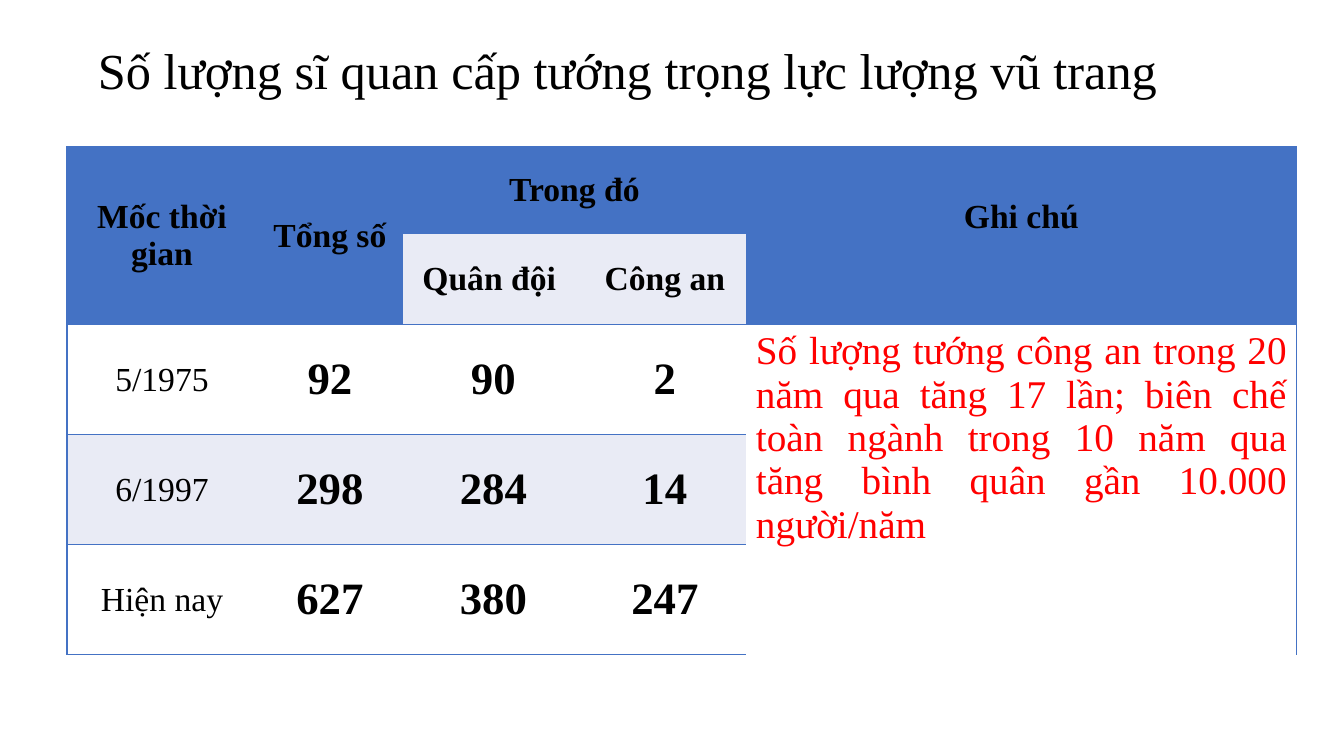
"""Build a slide with a table of general-rank officer counts."""
from dataclasses import dataclass

from lxml import etree
from pptx import Presentation
from pptx import util as u
from pptx.dml.color import RGBColor
from pptx.enum import text
from pptx.oxml.ns import qn

CENTER, JUSTIFY = text.PP_ALIGN.CENTER, text.PP_ALIGN.JUSTIFY
TOP, MIDDLE = text.MSO_ANCHOR.TOP, text.MSO_ANCHOR.MIDDLE


@dataclass(frozen=True)
class Theme:
    """Colours, font and type sizes of the slide."""
    font: str = "Times New Roman"
    ink: str = "000000"
    alert: str = "FF0000"
    blue: str = "4472C4"
    band: str = "E9EBF5"
    white: str = "FFFFFF"
    title: int = 36
    figure: int = 32
    note: int = 28
    label: int = 24


class Deck:
    """Hold the theme and the current slide and draw elements on it."""
    PX = 914400 / 100.8

    def __init__(self, theme, width, height):
        """Open a presentation with one blank slide."""
        self.theme = theme
        self.prs = Presentation()
        self.prs.slide_width, self.prs.slide_height = self.px(width), self.px(height)
        self.s = self.prs.slides.add_slide(self.prs.slide_layouts[6])

    def px(self, n):
        """Turn whole pixels into EMU."""
        return u.Emu(round(n * self.PX))

    def paragraph(self, tf, words, size, color, bold=False, **layout):
        """Set one formatted paragraph."""
        p = tf.paragraphs[0]
        for name, value in layout.items():
            setattr(p, name, value)
        r = p.add_run()
        r.text = words
        font = {"name": self.theme.font, "size": u.Pt(size), "bold": bold}
        for name, value in font.items():
            setattr(r.font, name, value)
        r.font.color.rgb = RGBColor.from_string(color)

    def title(self, words, *box):
        """Add the slide title."""
        tf = self.s.shapes.add_textbox(*map(self.px, box)).text_frame
        for name, value in {"word_wrap": True, "vertical_anchor": MIDDLE}.items():
            setattr(tf, name, value)
        self.paragraph(tf, words, self.theme.title, self.theme.ink, line_spacing=0.9)

    def table(self, left, top, widths, heights):
        """Add an empty table with the given column widths and row heights."""
        box = (left, top, sum(widths), sum(heights))
        table = self.s.shapes.add_table(
            len(heights), len(widths), *map(self.px, box)).table
        for column, width in zip(table.columns, widths):
            column.width = self.px(width)
        for row, height in zip(table.rows, heights):
            row.height = self.px(height)
        return table

    def cell(self, cell, fill, sides):
        """Fill a cell and rule only the named sides."""
        tcPr = cell._tc.get_or_add_tcPr()
        for side in "LRTB":
            ln = etree.SubElement(tcPr, qn(f"a:ln{side}"), w=str(u.Pt(1)))
            if side in sides:
                solid = etree.SubElement(ln, qn("a:solidFill"))
                etree.SubElement(solid, qn("a:srgbClr"), val=self.theme.blue)
            else:
                etree.SubElement(ln, qn("a:noFill"))
        cell.fill.solid()
        cell.fill.fore_color.rgb = RGBColor.from_string(fill)

    def cell_text(self, cell, words, size, color, bold, align=CENTER, anchor=MIDDLE):
        """Set the text of a cell."""
        cell.vertical_anchor = anchor
        self.paragraph(cell.text_frame, words, size, color, bold, alignment=align)


def main():
    """Draw the slide and save it."""
    t = Theme()
    d = Deck(t, 1344, 756)
    d.title("Số lượng sĩ quan cấp tướng trọng lực lượng vũ trang", 88, 0, 1159, 146)

    table = d.table(67, 147, (190, 146, 181, 162, 551), (87, 87, 110, 110, 110))
    merges = [(0, 0, 1, 0), (0, 1, 1, 1), (0, 2, 0, 3), (0, 4, 1, 4), (2, 4, 4, 4)]
    for r1, c1, r2, c2 in merges:
        table.cell(r1, c1).merge(table.cell(r2, c2))

    last = 4
    for r in range(5):
        for c in range(5):
            sides = "L" if c == 0 else "R" if c == last else ""
            if r in (0, 2) or (r > 2 and c < last):
                sides += "T"
            if r in (1, 4) or (r > 1 and c < last):
                sides += "B"
            header = r == 0 or (r == 1 and c in (0, 1, last))
            banded = r % 2 == 1 and c < last
            fill = t.blue if header else t.band if banded else t.white
            d.cell(table.cell(r, c), fill, sides)

    headings = {(0, 0): "Mốc thời gian", (0, 1): "Tổng số", (0, 2): "Trong đó",
                (0, 4): "Ghi chú", (1, 2): "Quân đội ", (1, 3): "Công an"}
    for place, words in headings.items():
        d.cell_text(table.cell(*place), words, t.label, t.ink, True)
    table.cell(0, 4).margin_bottom = d.px(42)

    counts = [("5/1975", 92, 90, 2), ("6/1997", 298, 284, 14),
              ("Hiện nay", 627, 380, 247)]
    for r, row in enumerate(counts, 2):
        for c, value in enumerate(row):
            size = t.figure if c else t.label
            d.cell_text(table.cell(r, c), str(value), size, t.ink, c > 0)

    note = ("Số lượng tướng công an trong 20 năm qua tăng 17 lần; biên chế "
            "toàn ngành trong 10 năm qua tăng bình quân gần 10.000 người/năm")
    d.cell_text(table.cell(2, 4), note, t.note, t.alert, False, JUSTIFY, TOP)
    d.prs.save("out.pptx")


if __name__ == "__main__":
    main()
